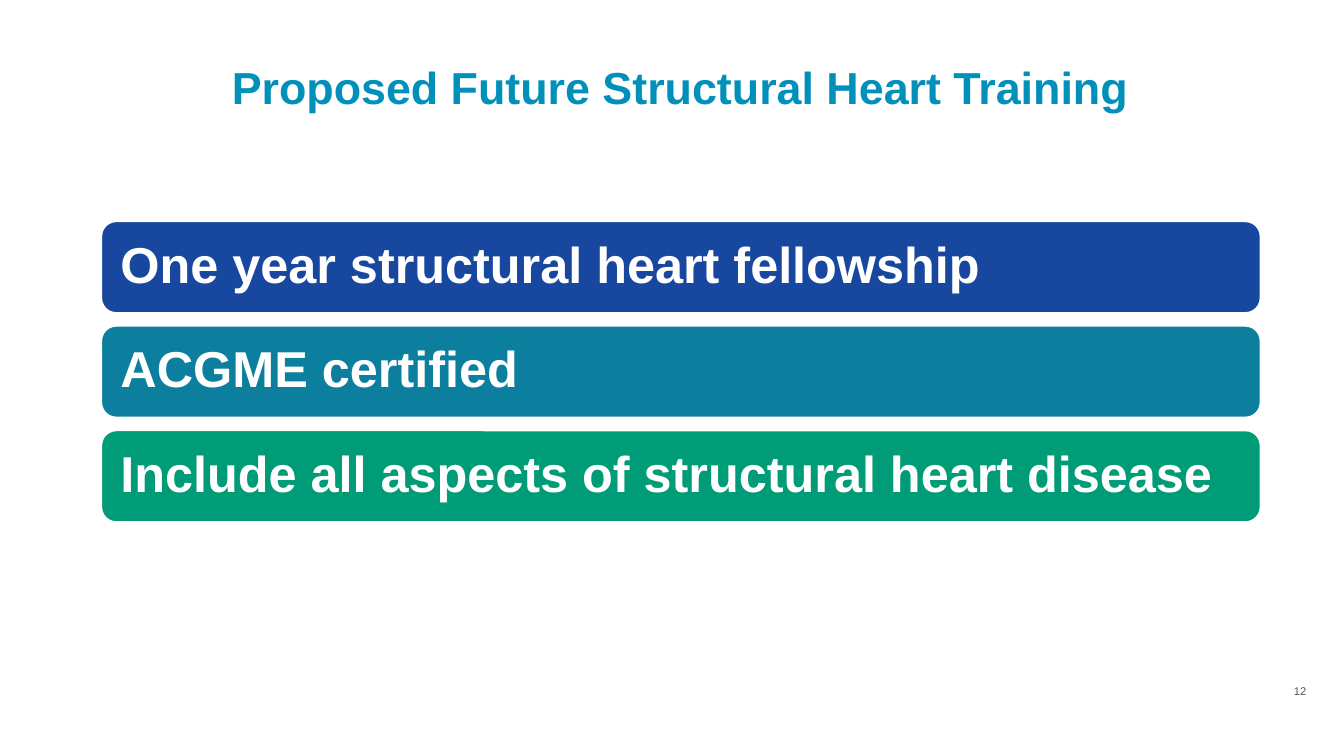
import dataclasses

import pptx
import pptx.dml.color
import pptx.enum.shapes
import pptx.enum.text
import pptx.util

ALIGN = pptx.enum.text.PP_ALIGN
WIDE, HIGH = 13.33, 7.5


@dataclasses.dataclass(frozen=True)
class Theme:
    face: str = "Arial"
    white: str = "FFFFFF"
    title: str = "0090BA"
    grey: str = "555555"
    bars: tuple = ("17479E", "0B7F9D", "009B77")
    head: int = 32
    body: int = 36
    note: int = 8
    edge: int = 2


THEME = Theme()
GOALS = (
    "One year structural heart fellowship",
    "ACGME certified",
    "Include all aspects of structural heart disease",
)
# Left, top, width and height as percent of the slide
TITLE = (7.5, 6.93, 86.27, 8.93)
FIRST = (7.5, 29.2, 86.33, 12.27)
PITCH = 13.83
NUMBER = (95.72, 90.53, 2.03, 1.73)


def color(code):
    return pptx.dml.color.RGBColor.from_string(code)


def place(area):
    """Turn percent of the slide into lengths."""
    sides = (WIDE, HIGH, WIDE, HIGH)
    return [pptx.util.Inches(side * part / 100) for side, part in zip(sides, area)]


def write(shape, text, size, tint, align, inset, bold=True):
    frame = shape.text_frame
    pad = pptx.util.Inches(inset)
    form = {
        "word_wrap": True,
        "vertical_anchor": pptx.enum.text.MSO_ANCHOR.MIDDLE,
        "margin_left": pad,
        "margin_right": pad,
        "margin_top": pad,
        "margin_bottom": pad,
    }
    for key, value in form.items():
        setattr(frame, key, value)
    line = frame.paragraphs[0]
    line.alignment = align
    run = line.add_run()
    run.text = text
    form = {"name": THEME.face, "size": pptx.util.Pt(size), "bold": bold}
    for key, value in form.items():
        setattr(run.font, key, value)
    run.font.color.rgb = color(tint)
    return line


def label(slide, area, *style, **more):
    write(slide.shapes.add_textbox(*place(area)), *style, **more)


def bar(slide, area, text, tint):
    kind = pptx.enum.shapes.MSO_SHAPE.ROUNDED_RECTANGLE
    shape = slide.shapes.add_shape(kind, *place(area))
    shape.shadow.inherit = False
    shape.fill.solid()
    shape.fill.fore_color.rgb = color(tint)
    shape.line.color.rgb = color(THEME.white)
    shape.line.width = pptx.util.Pt(THEME.edge)
    line = write(shape, text, THEME.body, THEME.white, ALIGN.LEFT, 0.15)
    line.line_spacing = 0.9


def main():
    deck = pptx.Presentation()
    deck.slide_width = pptx.util.Inches(WIDE)
    deck.slide_height = pptx.util.Inches(HIGH)
    slide = deck.slides.add_slide(deck.slide_layouts[6])
    label(slide, TITLE, "Proposed Future Structural Heart Training",
          THEME.head, THEME.title, ALIGN.CENTER, 0.05)
    left, top, width, height = FIRST
    for row, (goal, tint) in enumerate(zip(GOALS, THEME.bars)):
        bar(slide, (left, top + row * PITCH, width, height), goal, tint)
    label(slide, NUMBER, "12", THEME.note, THEME.grey, ALIGN.CENTER, 0, bold=False)
    deck.save("out.pptx")


if __name__ == "__main__":
    main()
